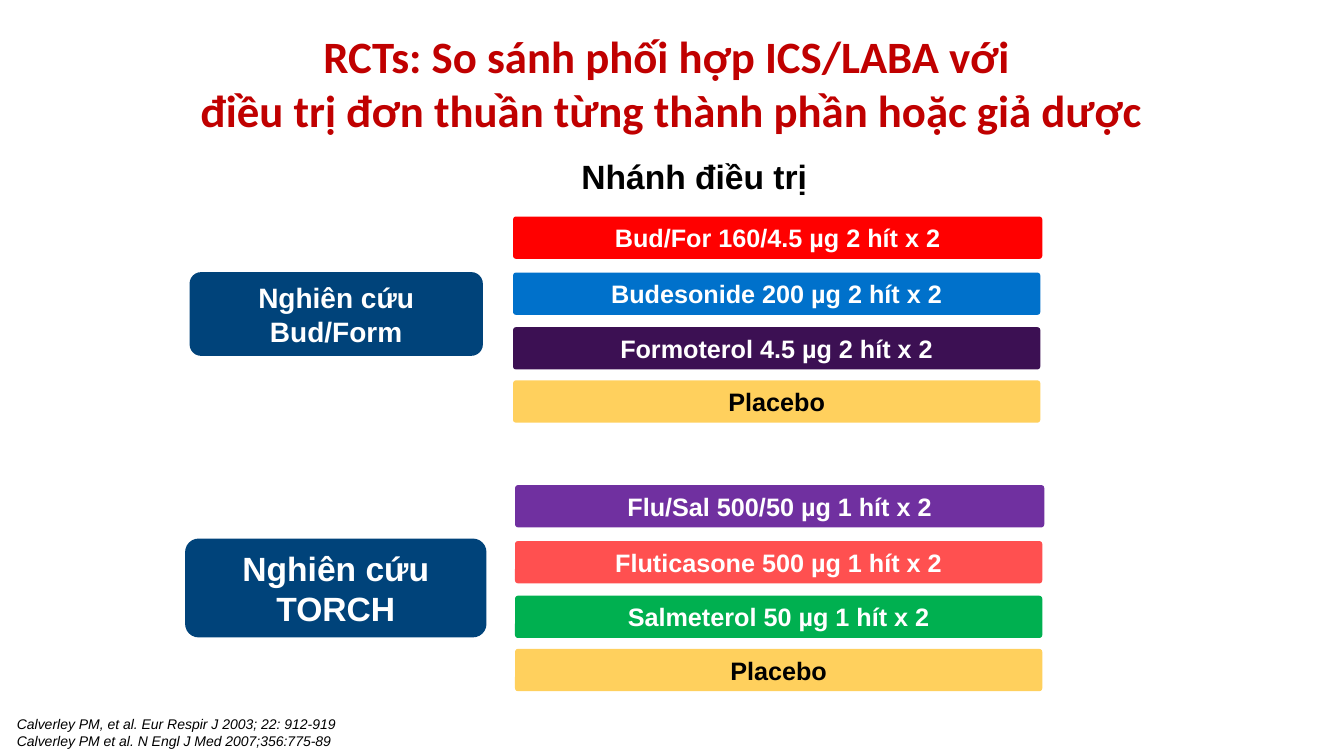
from pptx import Presentation
from pptx.dml.color import RGBColor
from pptx.enum.shapes import MSO_SHAPE
from pptx.enum.text import MSO_ANCHOR, PP_ALIGN
from pptx.util import Pt

COLORS = {
    "title": "C00000", "black": "000000", "white": "FFFFFF",
    "navy": "00437A", "red": "FF0000", "blue": "0071CB",
    "plum": "3C1053", "gold": "FFD05D", "purple": "7030A0",
    "coral": "FF5050", "green": "00B050",
}


class Deck:
    """Holds the style and the current slide."""

    def __init__(self, wide, high):
        self.file = Presentation()
        self.file.slide_width, self.file.slide_height = Pt(wide), Pt(high)
        self.slide = self.file.slides.add_slide(self.file.slide_layouts[6])

    def color(self, name):
        return RGBColor.from_string(COLORS[name])

    def set_text(self, shape, text, size, ink, align, anchor, face="Arial", bold=True):
        frame = shape.text_frame
        frame.word_wrap = True
        frame.vertical_anchor = anchor
        frame.text = text
        for line in frame.paragraphs:
            line.alignment = align
            font = line.font
            font.name, font.size = face, Pt(size)
            font.bold, font.italic = bold, not bold
            font.color.rgb = self.color(ink)

    def label(self, box, text, size, ink="black", align=PP_ALIGN.LEFT, **style):
        shape = self.slide.shapes.add_textbox(*map(Pt, box))
        self.set_text(shape, text, size, ink, align, MSO_ANCHOR.TOP, **style)

    def block(self, group, box, text, size, fill, ink="white", bend=0.07):
        shape = group.shapes.add_shape(MSO_SHAPE.ROUNDED_RECTANGLE, *map(Pt, box))
        shape.adjustments[0] = bend
        shape.shadow.inherit = False
        shape.fill.solid()
        shape.fill.fore_color.rgb = self.color(fill)
        shape.line.fill.background()
        self.set_text(shape, text, size, ink, PP_ALIGN.CENTER, MSO_ANCHOR.MIDDLE)

    def study(self, left, top, arms, name, size, box):
        group = self.slide.shapes.add_group_shape()
        rows = zip((0, 40, 79, 117), (378, 376.6, 376.6, 376.6), arms)
        for drop, wide, (text, fill) in rows:
            ink = "black" if fill == "gold" else "white"
            self.block(group, (left, top + drop, wide, 30.2), text, 18, fill, ink)
        self.block(group, box, name, size, "navy", bend=0.137)


def main():
    deck = Deck(960, 540)

    # Heading
    deck.label((20.9, 17.3, 918, 59),
               "RCTs: So sánh phối hợp ICS/LABA với \v"
               "điều trị đơn thuần từng thành phần hoặc giả dược",
               32, "title", PP_ALIGN.CENTER, face="Calibri")

    # First study and its arms
    deck.study(366.5, 154.7, [
        ("Bud/For 160/4.5 µg 2 hít x 2", "red"),
        ("Budesonide 200 µg 2 hít x 2", "blue"),
        ("Formoterol 4.5 µg 2 hít x 2", "plum"),
        ("Placebo", "gold"),
    ], "Nghiên cứu Bud/Form", 20, (135.4, 194.4, 209.5, 59.8))

    # Column heading
    deck.label((408.2, 108, 299.5, 36), "Nhánh điều trị", 24)

    # Second study and its arms
    deck.study(367.9, 346.5, [
        ("Flu/Sal 500/50 µg 1 hít x 2", "purple"),
        ("Fluticasone 500 µg 1 hít x 2", "coral"),
        ("Salmeterol 50 µg 1 hít x 2", "green"),
        ("Placebo", "gold"),
    ], "Nghiên cứu TORCH", 24, (132.2, 384.7, 215.3, 70.6))

    # References
    deck.label((5, 507.6, 414.7, 31.7),
               "Calverley PM, et al. Eur Respir J 2003; 22: 912-919\n"
               "Calverley PM et al. N Engl J Med 2007;356:775-89",
               10, bold=False)

    deck.file.save("out.pptx")


if __name__ == "__main__":
    main()
